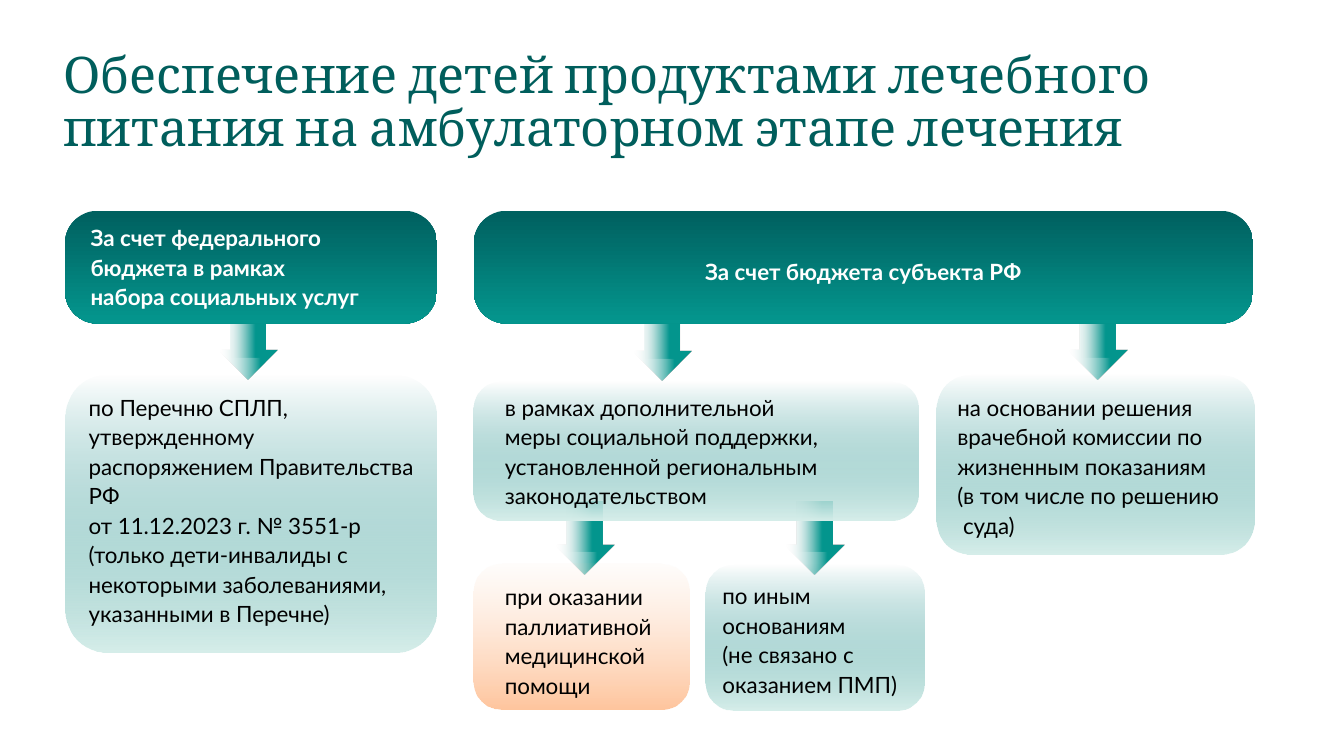
"""Build a slide on how therapeutic nutrition for children is funded."""
from lxml.etree import SubElement
from pptx import Presentation
from pptx.dml.color import RGBColor
from pptx.enum.shapes import MSO_SHAPE as Shape
from pptx.enum.text import PP_ALIGN as Align
from pptx.oxml.ns import qn
from pptx.util import Pt

COLORS = {
    "title": "005E5C", "black": "000000", "white": "FFFFFF",
    "deep": "006160", "teal": "04968E", "mist": "D6EEEA",
    "sea": "007E7B", "grey": "F2F2F2", "orange": "FFAF78", "peach": "FFCCA9",
}
GRADIENTS = {
    "arrow": (0, "0", [(3, "grey", 0), (71, "teal", 100)]),
    "header": (270, "1", [(3, "deep", 100), (100, "teal", 100)]),
    "mint": (90, "1", [(0, "mist", 100), (100, "sea", 0)]),
    "warm": (90, "1", [(0, "orange", 72), (100, "peach", 4)]),
}


def add_gradient_shape(shapes, kind, place, rotation, adjustments, gradient):
    """Add a rotated borderless shape with a gradient fill."""
    shape = shapes.add_shape(kind, *map(Pt, place))
    shape.rotation = rotation
    shape.shadow.inherit = False
    shape.line.fill.background()
    for index, value in enumerate(adjustments):
        shape.adjustments[index] = value
    angle, turns, stops = GRADIENTS[gradient]
    shape.fill.gradient()
    fill = shape._element.spPr.find(qn("a:gradFill"))
    for child in list(fill):
        fill.remove(child)
    fill.set("rotWithShape", turns)
    stop_list = SubElement(fill, qn("a:gsLst"))
    for position, color, opacity in stops:
        stop = SubElement(stop_list, qn("a:gs"), pos=str(position * 1000))
        tint = SubElement(stop, qn("a:srgbClr"), val=COLORS[color])
        if opacity < 100:
            SubElement(tint, qn("a:alpha"), val=str(opacity * 1000))
    SubElement(fill, qn("a:lin"), ang=str(angle * 60000), scaled="0")


def add_text(place, lines, color, indent=0, size=16, name="Lato", bold=False,
             spacing=1.1, align=Align.LEFT, top=3.6):
    """Add a wrapping text box with one paragraph per line."""
    frame = page.shapes.add_textbox(*map(Pt, place)).text_frame
    frame.word_wrap = True
    frame.margin_top = Pt(top)
    for index, line in enumerate(lines):
        para = frame.add_paragraph() if index else frame.paragraphs[0]
        para.text = line
        para.alignment = align
        para.line_spacing = spacing
        if indent:
            para._p.get_or_add_pPr().set("marL", str(Pt(indent)))
        for gap in para._p.findall(qn("a:br")):
            SubElement(gap, qn("a:rPr"), sz=str(size * 100))
        for span in para.runs:
            for key, value in {"size": Pt(size), "name": name, "bold": bold}.items():
                setattr(span.font, key, value)
            span.font.color.rgb = RGBColor.from_string(COLORS[color])


deck = Presentation()
deck.slide_width, deck.slide_height = Pt(960), Pt(540)
page = deck.slides.add_slide(deck.slide_layouts[6])

for center_x, center_y in [(417.6, 384.1), (581.8, 384.1), (784.1, 245.2),
                           (177.1, 245.2), (473, 245.9)]:
    arrow = page.shapes.add_group_shape().shapes
    add_gradient_shape(arrow, Shape.RIGHT_ARROW,
                       (center_x - 25.9, center_y - 21.2, 51.8, 42.4),
                       90, [0.6, 0.5], "arrow")
    add_gradient_shape(arrow, Shape.RECTANGLE,
                       (center_x - 18, center_y - 20.5, 36, 25.2), 90, [], "arrow")

for place, rounding, gradient in [
    ((504, 403.2, 156, 104.4), 0.195, "mint"),
    ((338.4, 272.2, 317.5, 99.4), 0.195, "mint"),
    ((46.4, 150.5, 265.7, 80.6), 0.289, "header"),
    ((338.4, 150.5, 556.6, 80.6), 0.289, "header"),
    ((668.9, 267.8, 226.8, 128.2), 0.195, "mint"),
    ((46.8, 267.8, 265, 198), 0.153, "mint"),
    ((338.4, 402.5, 154.1, 104.4), 0.195, "warm"),
]:
    add_gradient_shape(page.shapes, Shape.ROUNDED_RECTANGLE, place, 180, [rounding], gradient)

add_text((38.2, 29.5, 874.1, 85.7),
         ["Обеспечение детей продуктами лечебного питания на амбулаторном этапе лечения"],
         "title", size=36, name="Cambria", spacing=0.88, top=7)
add_text((57.6, 154.8, 280.8, 85.7),
         ["За счет федерального", "бюджета в рамках", "набора социальных услуг"],
         "white", bold=True)
add_text((338.4, 177.1, 556.6, 44.6), ["За счет бюджета субъекта РФ"],
         "white", bold=True, spacing=1.18, align=Align.CENTER)

for place, indent, lines in [
    ((56.2, 275.8, 248.4, 181.4), 0,
     ["по Перечню СПЛП, утвержденному распоряжением Правительства РФ",
      "от 11.12.2023 г. № 3551-р",
      "(только дети-инвалиды с некоторыми заболеваниями, указанными в Перечне)"]),
    ((342.7, 275.8, 285.8, 108.7), 10.8,
     ["в рамках дополнительной\vмеры социальной поддержки, "
      "установленной региональным законодательством"]),
    ((666, 275.8, 241.9, 120.2), 10.8,
     ["на основании решения врачебной комиссии по жизненным показаниям",
      "(в том числе по решению\v суда)"]),
    ((342.7, 411.1, 149, 104.4), 10.8,
     ["при оказании паллиативной медицинской помощи"]),
    ((498.2, 410.4, 170.6, 92.9), 10.8,
     ["по иным основаниям", "(не связано с оказанием ПМП)"]),
]:
    add_text(place, lines, "black", indent)

deck.save("out.pptx")
